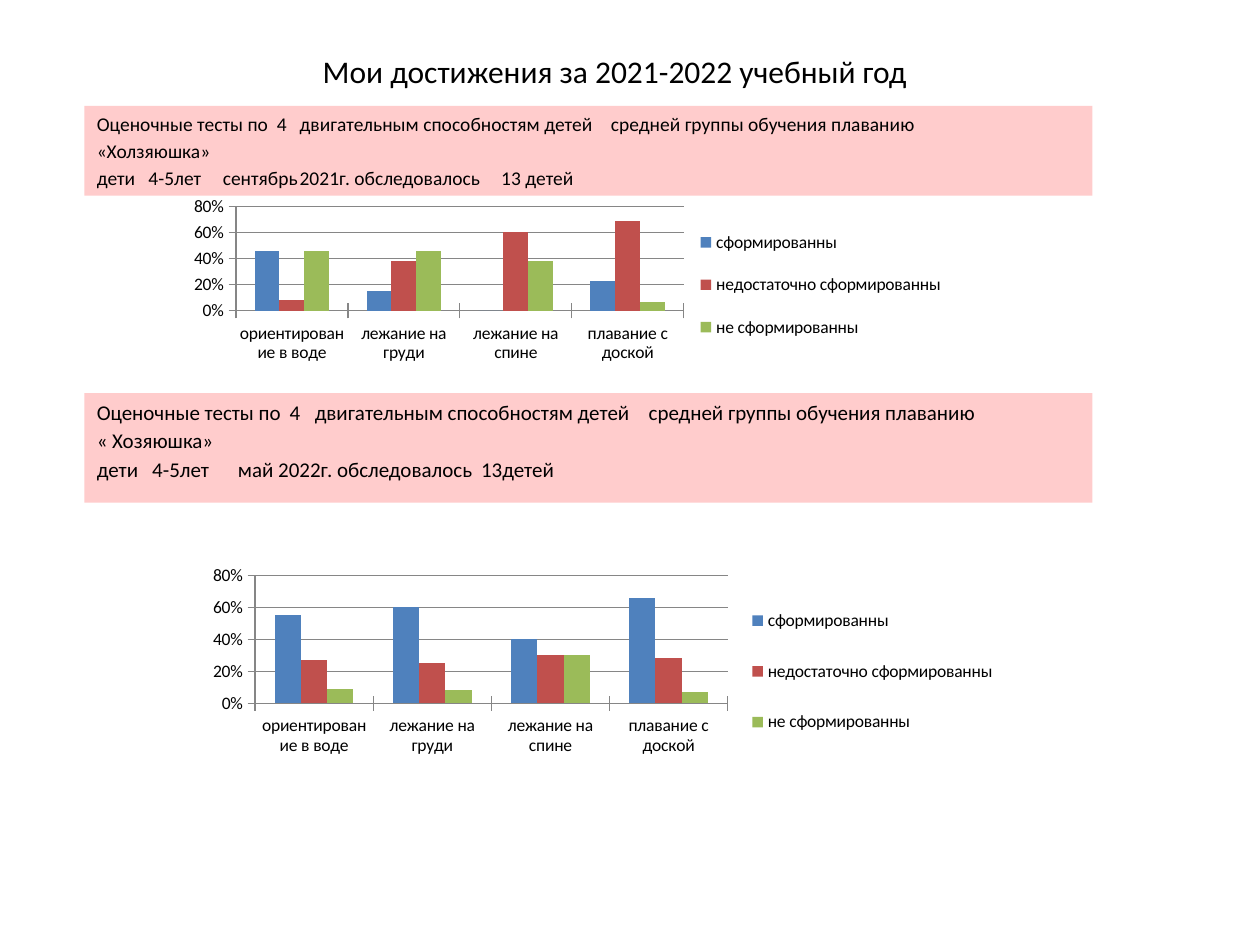
from dataclasses import dataclass

from lxml import etree
from pptx import Presentation
from pptx.chart.data import CategoryChartData
from pptx.dml.color import RGBColor
from pptx.enum.chart import XL_CHART_TYPE, XL_LEGEND_POSITION, XL_TICK_MARK
from pptx.enum.shapes import MSO_SHAPE
from pptx.enum.text import MSO_ANCHOR, PP_ALIGN
from pptx.oxml.ns import qn
from pptx.util import Inches, Pt

WIDTH, HEIGHT = Inches(10), Inches(7.5)
FONT = "Calibri"
BLACK = RGBColor(0x00, 0x00, 0x00)
PINK = RGBColor(0xFF, 0xCC, 0xCC)
GREY = RGBColor(0x86, 0x86, 0x86)
LEVELS = {
    "сформированны": RGBColor(0x4F, 0x81, 0xBD),
    "недостаточно сформированны": RGBColor(0xC0, 0x50, 0x4D),
    "не сформированны": RGBColor(0x9B, 0xBB, 0x59),
}
SKILLS = ["ориентирование в воде", "лежание на груди", "лежание на спине", "плавание с доской"]
TEST_TITLE = "Оценочные тесты по\t4\tдвигательным способностям детей\tсредней группы обучения плаванию"


@dataclass(frozen=True)
class Box:
    """Left, top, width and height as shares of the slide."""
    left: float
    top: float
    width: float
    height: float

    def emu(self) -> tuple[int, int, int, int]:
        return (int(self.left * WIDTH), int(self.top * HEIGHT),
                int(self.width * WIDTH), int(self.height * HEIGHT))


@dataclass(frozen=True)
class Line:
    text: str
    tabs: tuple[float, ...] = ()  # inches from the text edge


@dataclass(frozen=True)
class Survey:
    banner: Box
    size: float
    lines: tuple[Line, ...]
    plot: Box
    results: tuple[tuple[float, ...], ...]  # one row per level


SURVEYS = (
    Survey(
        Box(0.067, 0.112, 0.8, 0.095), 11.1,
        (Line(TEST_TITLE, (1.43, 1.61, 4.08)),
         Line("«Холзяюшка»"),
         Line("дети\t4-5лет\tсентябрь\t2021г. обследовалось\t13 детей", (0.41, 1.0, 1.61, 3.21))),
        Box(0.059, 0.207, 0.701, 0.189),
        ((0.46, 0.15, 0, 0.23), (0.08, 0.38, 0.6, 0.69), (0.46, 0.46, 0.38, 0.07)),
    ),
    Survey(
        Box(0.067, 0.416, 0.8, 0.116), 12,
        (Line(TEST_TITLE, (1.53, 1.73, 4.38)),
         Line("« Хозяюшка»"),
         Line("дети\t4-5лет\tмай 2022г. обследовалось\t13детей", (0.44, 1.12, 3.05))),
        Box(0.067, 0.595, 0.74, 0.231),
        ((0.55, 0.6, 0.4, 0.66), (0.27, 0.25, 0.3, 0.28), (0.09, 0.08, 0.3, 0.07)),
    ),
)


def add_run(paragraph, text: str, size: float) -> None:
    run = paragraph.add_run()
    run.text = text
    run.font.name, run.font.size = FONT, Pt(size)
    run.font.color.rgb = BLACK


def add_tabs(paragraph, stops: tuple[float, ...]) -> None:
    tab_list = etree.SubElement(paragraph._p.get_or_add_pPr(), qn("a:tabLst"))
    for stop in stops:
        etree.SubElement(tab_list, qn("a:tab"), pos=str(Inches(stop)), algn="l")


def add_title(slide, text: str) -> None:
    frame = slide.shapes.add_textbox(*Box(0.114, 0.048, 0.748, 0.054).emu()).text_frame
    frame.word_wrap = True
    frame.paragraphs[0].alignment = PP_ALIGN.CENTER
    add_run(frame.paragraphs[0], text, 18)


def add_banner(slide, survey: Survey) -> None:
    banner = slide.shapes.add_shape(MSO_SHAPE.RECTANGLE, *survey.banner.emu())
    banner.shadow.inherit = False
    banner.fill.solid()
    banner.fill.fore_color.rgb = PINK
    banner.line.fill.background()
    frame = banner.text_frame
    frame.word_wrap = True
    frame.vertical_anchor = MSO_ANCHOR.TOP
    for index, line in enumerate(survey.lines):
        paragraph = frame.add_paragraph() if index else frame.paragraphs[0]
        paragraph.alignment = PP_ALIGN.LEFT
        if index:
            paragraph.space_before = Pt(2)
        if line.tabs:
            add_tabs(paragraph, line.tabs)
        add_run(paragraph, line.text, survey.size)


def set_layout(parent, before: str, area: Box, inner: bool = False) -> None:
    """Place a chart part by shares of the chart, ahead of the given sibling."""
    for old in parent.findall(qn("c:layout")):
        parent.remove(old)
    layout = etree.Element(qn("c:layout"))
    manual = etree.SubElement(layout, qn("c:manualLayout"))
    values = {"layoutTarget": "inner"} if inner else {}
    values |= {"xMode": "edge", "yMode": "edge", "x": area.left, "y": area.top,
               "w": area.width, "h": area.height}
    for tag, value in values.items():
        etree.SubElement(manual, qn(f"c:{tag}"), val=str(value))
    parent.find(qn(before)).addprevious(layout)


def add_results(slide, survey: Survey) -> None:
    data = CategoryChartData(number_format="0%")
    data.categories = SKILLS
    for level, shares in zip(LEVELS, survey.results):
        data.add_series(level, shares)
    chart = slide.shapes.add_chart(
        XL_CHART_TYPE.COLUMN_CLUSTERED, *survey.plot.emu(), data).chart
    chart.has_title = False
    chart.font.name, chart.font.size = FONT, Pt(10)
    chart.font.color.rgb = BLACK

    # Columns
    columns = chart.plots[0]
    columns.gap_width, columns.overlap = 150, 0
    columns.vary_by_categories = False
    for series, color in zip(columns.series, LEVELS.values()):
        series.format.fill.solid()
        series.format.fill.fore_color.rgb = color

    # Axes
    shares_axis = chart.value_axis
    shares_axis.minimum_scale, shares_axis.maximum_scale = 0, 0.8
    shares_axis.major_unit = 0.2
    shares_axis.tick_labels.number_format = "0%"
    shares_axis.tick_labels.number_format_is_linked = False
    for axis in (chart.category_axis, shares_axis):
        axis.major_tick_mark = XL_TICK_MARK.CROSS
        axis.format.line.color.rgb = GREY
    shares_axis.major_gridlines.format.line.color.rgb = GREY

    # Legend and plot area
    chart.has_legend = True
    legend = chart.legend
    legend.position = XL_LEGEND_POSITION.RIGHT
    legend.include_in_layout = False
    set_layout(legend._element, "c:overlay", Box(0.69, 0.08, 0.31, 0.84))
    set_layout(columns._element.getparent(), "c:barChart",
               Box(0.183, 0.06, 0.507, 0.586), inner=True)


def main() -> None:
    presentation = Presentation()
    presentation.slide_width, presentation.slide_height = WIDTH, HEIGHT
    slide = presentation.slides.add_slide(presentation.slide_layouts[6])
    add_title(slide, "Мои достижения за 2021-2022 учебный год")
    for survey in SURVEYS:
        add_banner(slide, survey)
        add_results(slide, survey)
    presentation.save("out.pptx")


if __name__ == "__main__":
    main()
